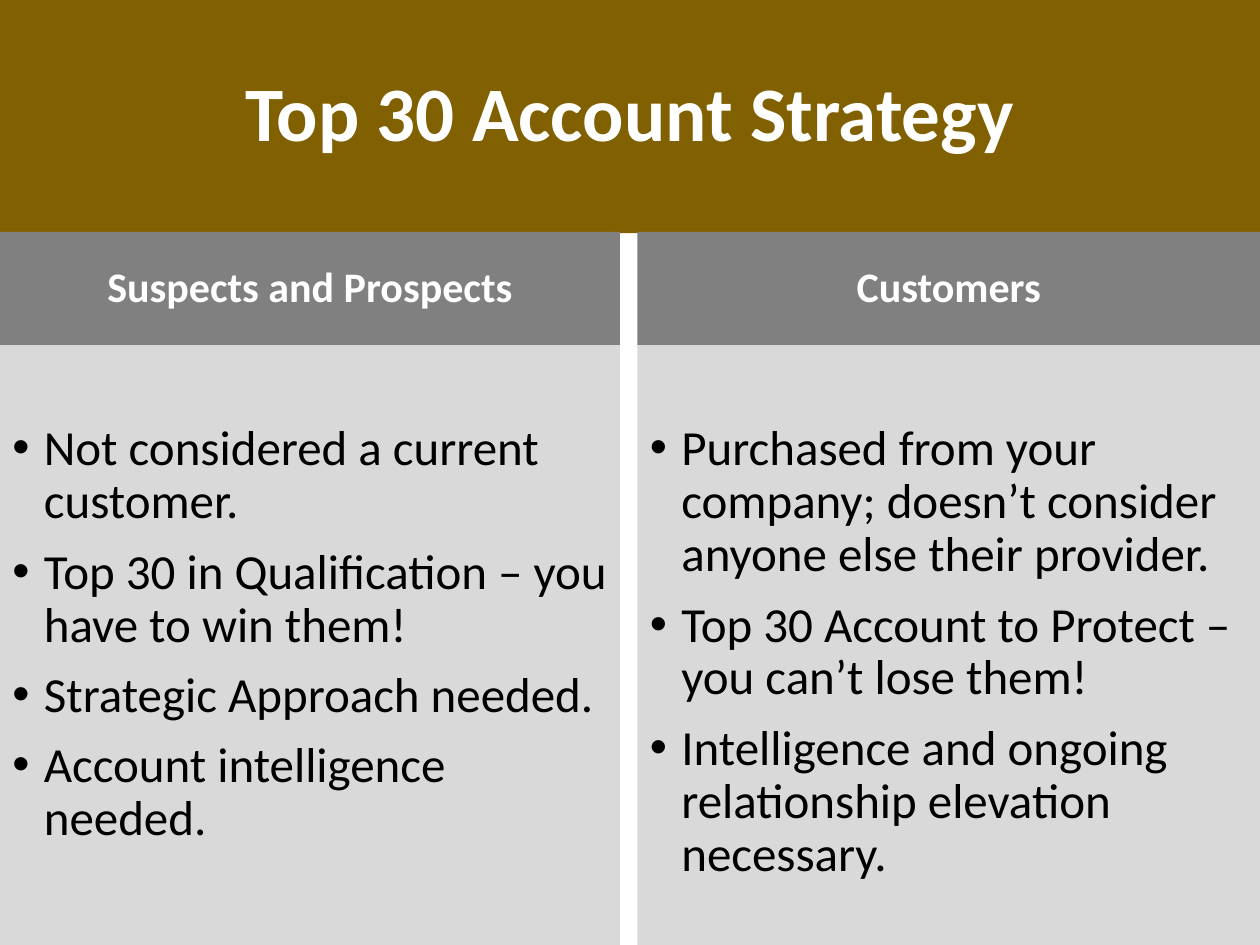
from pptx import Presentation
from pptx.dml.color import RGBColor
from pptx.enum.shapes import MSO_SHAPE
from pptx.enum.text import MSO_ANCHOR, PP_ALIGN
from pptx.oxml.ns import qn
from pptx.util import Inches, Pt
from lxml.etree import SubElement

TITLE = "Top 30 Account Strategy"
COLUMNS = [
    ("Suspects and Prospects", [
        "Not considered a current customer.",
        "Top 30 in Qualification – you have to win them!",
        "Strategic Approach needed.",
        "Account intelligence needed.",
    ]),
    ("Customers", [
        "Purchased from your company; doesn’t consider anyone else their provider.",
        "Top 30 Account to Protect – you can’t lose them!",
        "Intelligence and ongoing relationship elevation necessary.",
    ]),
]
COLORS = {"title": "806000", "head": "808080", "body": "D9D9D9",
          "light": "FFFFFF", "dark": "000000"}
FONT = "Calibri"
WIDTH, HEIGHT = 10, 7.5
SPANS = [(0, 4.92), (5.06, WIDTH)]
TITLE_H = 1.85
HEAD_TOP, HEAD_H = 1.84, 0.9
BODY_TOP, BODY_H = HEAD_TOP + HEAD_H, 4.93
BODY_INSET = 0.62
INDENT = 0.25


def panel(slide, box, fill, lines, size, ink, bold=False):
    """Add a filled rectangle holding one paragraph per line."""
    shape = slide.shapes.add_shape(MSO_SHAPE.RECTANGLE, *map(Inches, box))
    shape.shadow.inherit = False
    shape.fill.solid()
    shape.fill.fore_color.rgb = RGBColor.from_string(COLORS[fill])
    shape.line.fill.background()
    frame = shape.text_frame
    frame.word_wrap = True
    frame.vertical_anchor = MSO_ANCHOR.MIDDLE
    frame.text = "\n".join(lines)
    for para in frame.paragraphs:
        para.alignment = PP_ALIGN.CENTER
        para.line_spacing = 0.9
        for run in para.runs:
            font = run.font
            font.name, font.size, font.bold = FONT, Pt(size), bold
            font.color.rgb = RGBColor.from_string(COLORS[ink])
    return frame


def bullets(frame):
    frame.vertical_anchor = MSO_ANCHOR.TOP
    frame.margin_top = Inches(BODY_INSET)
    for i, para in enumerate(frame.paragraphs):
        para.alignment = PP_ALIGN.LEFT
        if i:
            para.space_before = Pt(10)
        props = para._p.get_or_add_pPr()
        props.set("marL", str(Inches(INDENT)))
        props.set("indent", str(-Inches(INDENT)))
        SubElement(props, qn("a:buFont")).set("typeface", "Arial")
        SubElement(props, qn("a:buChar")).set("char", "•")


def main():
    deck = Presentation()
    deck.slide_width, deck.slide_height = Inches(WIDTH), Inches(HEIGHT)
    slide = deck.slides.add_slide(deck.slide_layouts[6])
    panel(slide, (0, 0, WIDTH, TITLE_H), "title", [TITLE], 44, "light", True)
    for (left, right), (head, points) in zip(SPANS, COLUMNS):
        wide = right - left
        panel(slide, (left, HEAD_TOP, wide, HEAD_H), "head", [head], 24, "light", True)
        bullets(panel(slide, (left, BODY_TOP, wide, BODY_H), "body", points, 28, "dark"))
    deck.save("out.pptx")


if __name__ == "__main__":
    main()
